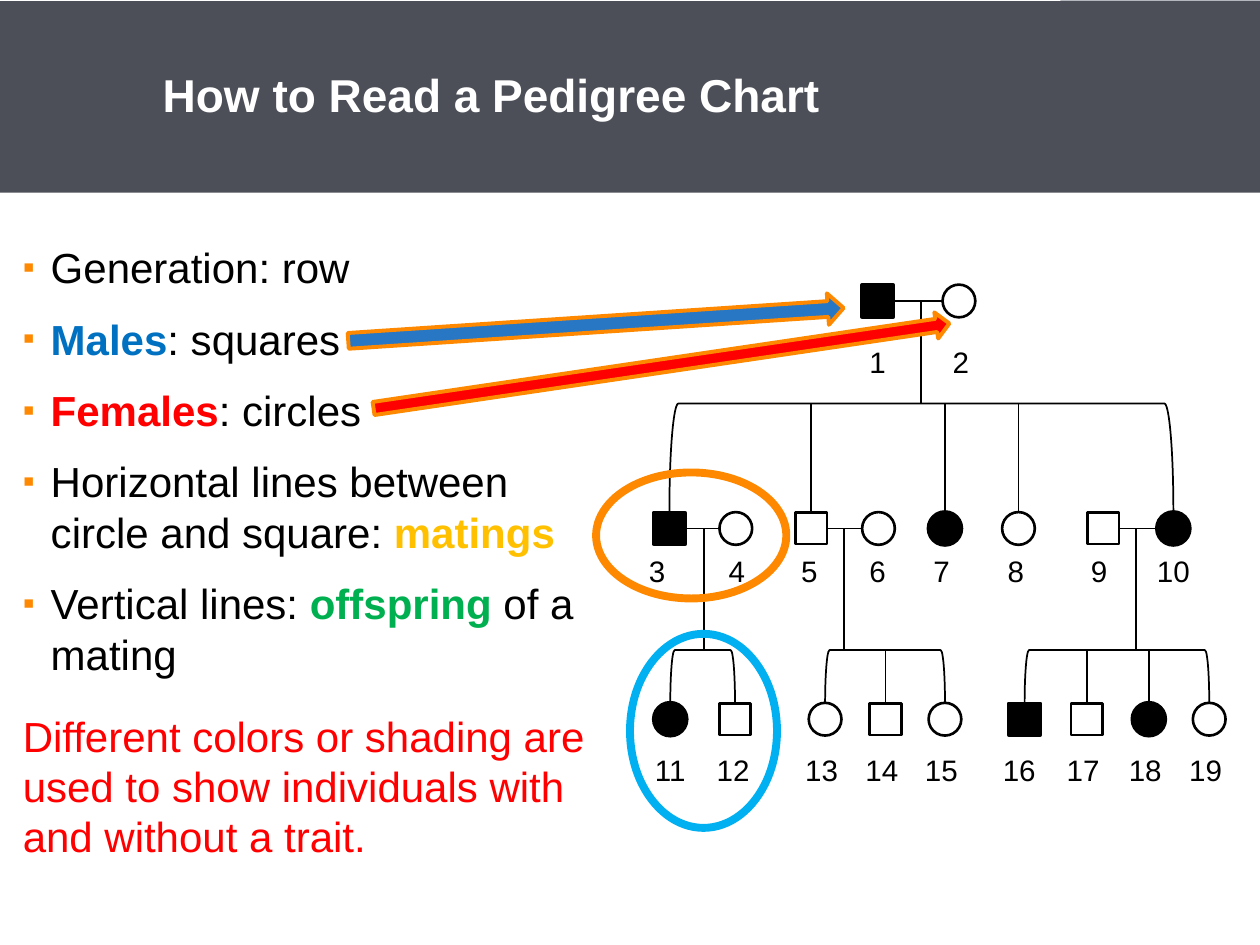
from lxml import etree
from pptx import Presentation
from pptx.dml.color import RGBColor
from pptx.enum.shapes import MSO_CONNECTOR, MSO_SHAPE
from pptx.enum.text import MSO_ANCHOR, PP_ALIGN
from pptx.oxml.ns import qn
from pptx.util import Pt

RECT, OVAL = MSO_SHAPE.RECTANGLE, MSO_SHAPE.OVAL
BRACKET, ARROW = MSO_SHAPE.LEFT_BRACKET, MSO_SHAPE.RIGHT_ARROW
STRAIGHT = MSO_CONNECTOR.STRAIGHT
MIDDLE, CENTER, LEFT = MSO_ANCHOR.MIDDLE, PP_ALIGN.CENTER, PP_ALIGN.LEFT
BLACK, WHITE, ORANGE, RED = "000000", "FFFFFF", "FE8900", "FF0000"

TITLE = "How to Read a Pedigree Chart"
BULLETS = [
    [("Generation: row", BLACK, False)],
    [("Males", "0070C0", True), (": squares", BLACK, False)],
    [("Females", RED, True), (": circles", BLACK, False)],
    [("Horizontal lines between circle and square: ", BLACK, False),
     ("matings", "FFC000", True)],
    [("Vertical lines: ", BLACK, False), ("offspring", "00B050", True),
     (" of a mating", BLACK, False)],
]
CLOSING = [("Different colors or shading are used to show individuals "
            "with and without a trait.", RED, False)]

SYMBOL_Y = [172, 302, 411]
NUMBER_TOP = [193, 312.5, 426]
PEOPLE = {
    1: (0, "M", True, 501.5, 501.5), 2: (0, "F", False, 548, 549),
    3: (1, "M", True, 382.5, 375.5), 4: (1, "F", False, 420.5, 421),
    5: (1, "M", False, 463.5, 462.5), 6: (1, "F", False, 502, 501.5),
    7: (1, "F", True, 540, 538), 8: (1, "F", False, 582, 580.5),
    9: (1, "M", False, 630.5, 628), 10: (1, "F", True, 670.5, 670.5),
    11: (2, "F", True, 383, 383), 12: (2, "M", False, 420, 419),
    13: (2, "F", False, 471.5, 469.5), 14: (2, "M", False, 506, 504),
    15: (2, "F", False, 540, 538), 16: (2, "M", True, 585.5, 582.5),
    17: (2, "M", False, 621, 619), 18: (2, "F", True, 656.5, 654.5),
    19: (2, "F", False, 691, 689),
}
FAMILIES = [
    (1, 2, 526.5, 230.5, [3, 5, 7, 8, 10]),
    (3, 4, 402.5, 371.5, [11, 12]),
    (5, 6, 482.5, 371.5, [13, 14, 15]),
    (9, 10, 649, 371.5, [16, 17, 18, 19]),
]
ARROWS = [
    ((198.7, 176.4, 283.7, 18), -3.8, "2877C4"),
    ((211.7, 201.6, 332.6, 15.1), -8.4, RED),
]
RINGS = [((340.6, 270, 108.7, 72), ORANGE), ((360, 362.2, 84, 110.9), "00B0F0")]
SIZES = {"M": 18, "F": 18.7}

prs = Presentation()
prs.slide_width, prs.slide_height = Pt(720), Pt(540)
s = prs.slides.add_slide(prs.slide_layouts[6])


def rgb(value):
    return RGBColor.from_string(value)


def add_shape(kind, box, fill=None, line=None, width=1):
    sp = s.shapes.add_shape(kind, *map(Pt, box))
    sp.shadow.inherit = False
    if fill:
        sp.fill.solid()
        sp.fill.fore_color.rgb = rgb(fill)
    else:
        sp.fill.background()
    if line:
        sp.line.color.rgb = rgb(line)
        sp.line.width = Pt(width)
    else:
        sp.line.fill.background()
    return sp


def add_line(x1, y1, x2, y2):
    c = s.shapes.add_connector(STRAIGHT, Pt(x1), Pt(y1), Pt(x2), Pt(y2))
    c.line.color.rgb = rgb(BLACK)
    c.line.width = Pt(1)
    etree.SubElement(c._element.spPr, qn("a:effectLst"))
    return c


def style(r, size, color, bold=False):
    r.font.name, r.font.size, r.font.bold = "Arial", Pt(size), bold
    r.font.color.rgb = rgb(color)


def add_bullet(p):
    pPr = p._p.get_or_add_pPr()
    pPr.set("marL", str(Pt(16)))
    pPr.set("indent", str(Pt(-16)))
    clr = etree.SubElement(pPr, qn("a:buClr"))
    etree.SubElement(clr, qn("a:srgbClr")).set("val", ORANGE)
    etree.SubElement(pPr, qn("a:buSzPct")).set("val", "80000")
    etree.SubElement(pPr, qn("a:buFont")).set("typeface", "Arial")
    etree.SubElement(pPr, qn("a:buChar")).set("char", "▪")


def add_title():
    add_shape(RECT, (606, 0, 114, 108.7), "B5B7BF")
    sp = add_shape(RECT, (0, 0.7, 720, 109.4), "4D4F58")
    tf = sp.text_frame
    tf.text, tf.vertical_anchor, tf.margin_left = TITLE, MIDDLE, Pt(93)
    p = tf.paragraphs[0]
    p.alignment, p.line_spacing = LEFT, 0.95
    style(p.runs[0], 26.3, WHITE, True)


def add_body():
    tf = s.shapes.add_textbox(Pt(0), Pt(131), Pt(350), Pt(371)).text_frame
    tf.word_wrap = True
    tf.margin_left, tf.margin_right = Pt(13), 0
    tf.margin_top = tf.margin_bottom = Pt(7.2)
    spaces = [8.4] + [12] * (len(BULLETS) - 1) + [18]
    for i, (parts, space) in enumerate(zip(BULLETS + [CLOSING], spaces)):
        p = tf.add_paragraph() if i else tf.paragraphs[0]
        p.line_spacing, p.space_before = 1.0, Pt(space)
        if parts is not CLOSING:
            add_bullet(p)
        for text, color, bold in parts:
            r = p.add_run()
            r.text = text
            style(r, 24, color, bold)


def add_person(number):
    row, sex, affected, x, number_x = PEOPLE[number]
    y, d = SYMBOL_Y[row], SIZES[sex]
    sp = add_shape(RECT if sex == "M" else OVAL, (x - d / 2, y - d / 2, d, d),
                   BLACK if affected else WHITE, BLACK, 2.25 if affected else 1.5)
    w = 24 if number < 10 else 33
    box = (number_x - w / 2, NUMBER_TOP[row], w, 28)
    tf = s.shapes.add_textbox(*map(Pt, box)).text_frame
    tf.text, tf.word_wrap = str(number), False
    p = tf.paragraphs[0]
    p.alignment = CENTER
    style(p.runs[0], 16.9, BLACK)
    return sp


def add_family(father, mother, drop_x, bar_y, children):
    row, _, _, father_x, _ = PEOPLE[father]
    y = SYMBOL_Y[row]
    mating = add_line(father_x + SIZES["M"] / 2, y, PEOPLE[mother][3] - SIZES["F"] / 2, y)
    mating.begin_connect(symbols[father], 3)
    add_line(drop_x, y, drop_x, bar_y)

    x1, x2 = PEOPLE[children[0]][3], PEOPLE[children[-1]][3]
    child_y = SYMBOL_Y[row + 1] - SIZES["F"] / 2
    span, depth = x2 - x1, child_y - bar_y
    sp = add_shape(BRACKET, ((x1 + x2 - depth) / 2, (bar_y + child_y - span) / 2,
                             depth, span), line=BLACK)
    sp.rotation, sp.adjustments[0] = 90, 0.083
    for child in children[1:-1]:
        x = PEOPLE[child][3]
        line = add_line(x, bar_y, x, child_y)
        if PEOPLE[child][1] == "M":
            line.end_connect(symbols[child], 0)


add_title()
add_body()
symbols = {number: add_person(number) for number in PEOPLE}
for family in FAMILIES:
    add_family(*family)
for box, angle, color in ARROWS:
    add_shape(ARROW, box, color, ORANGE, 2.25).rotation = angle
for box, color in RINGS:
    add_shape(OVAL, box, line=color, width=4.5)
prs.save("out.pptx")
